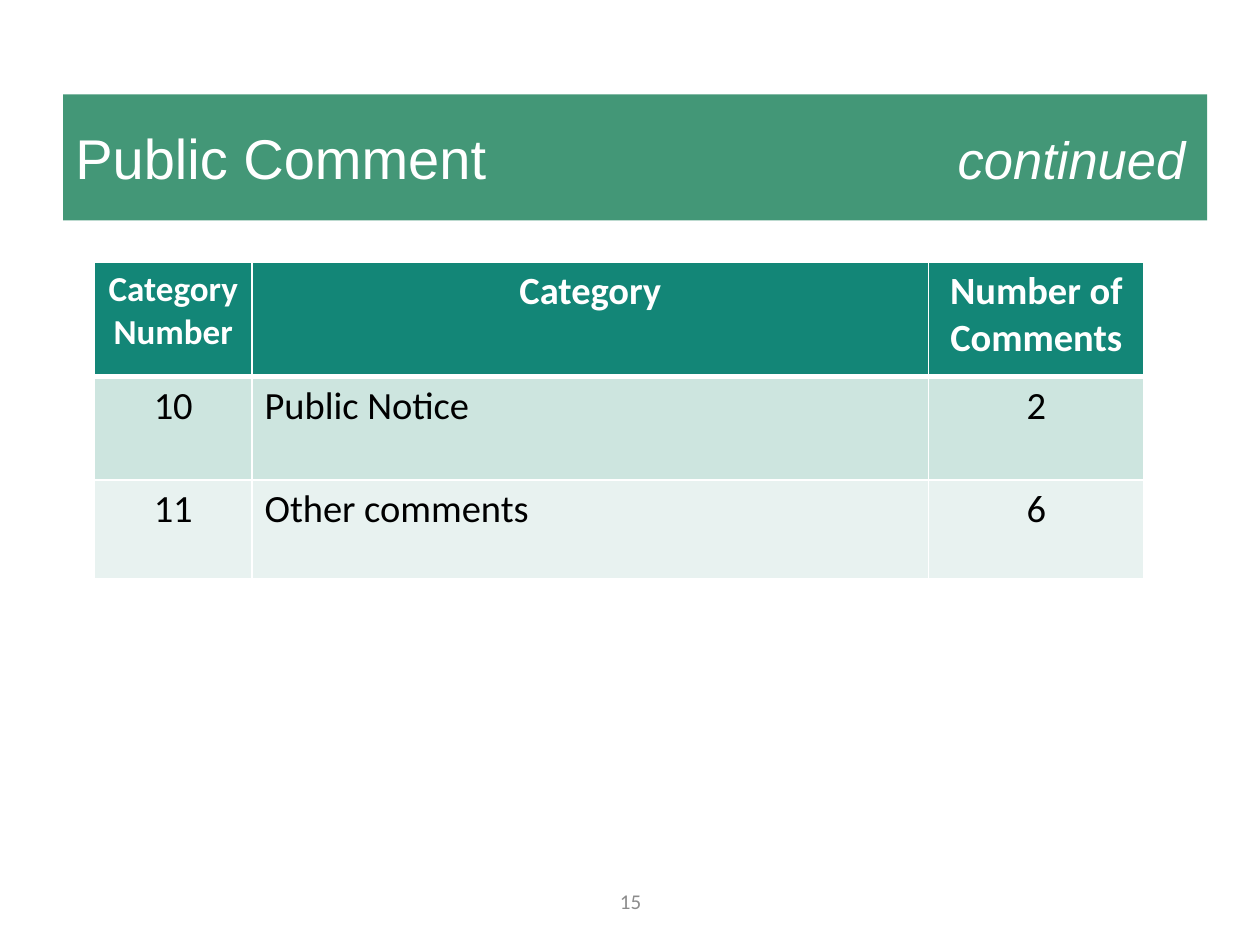
from lxml.etree import SubElement
from pptx import Presentation
from pptx.dml.color import RGBColor
from pptx.enum.shapes import MSO_SHAPE
from pptx.enum.text import MSO_ANCHOR, PP_ALIGN
from pptx.oxml.ns import qn
from pptx.util import Inches, Pt

TITLE, TITLE_NOTE = "Public Comment", "continued"
PAGE_NUMBER = "15"
HEADINGS = [("Category Number", 20), ("Category", 22), ("Number of Comments", 22)]
COMMENTS = [("10", "Public Notice", "2"), ("11", "Other comments", "6")]

COLUMN_WIDTHS = [1.25, 5.37, 1.71]
ROW_HEIGHTS = [0.91, 0.82, 0.78]
ROW_FILLS = ["138677", "CDE5DF", "E8F2F0"]
COLUMN_ALIGNS = [PP_ALIGN.CENTER, PP_ALIGN.LEFT, PP_ALIGN.CENTER]


def rgb(value):
    return RGBColor.from_string(value)


def fill(target, value):
    target.fill.solid()
    target.fill.fore_color.rgb = rgb(value)


def add_text(paragraph, text, size=22, font="Calibri", color="000000",
             bold=False, italic=False, align=PP_ALIGN.LEFT):
    paragraph.alignment = align
    run = paragraph.add_run()
    run.text = text
    run.font.size = Pt(size)
    run.font.name = font
    run.font.color.rgb = rgb(color)
    run.font.bold = bold
    run.font.italic = italic


def add_right_tab(paragraph, position):
    tabs = SubElement(paragraph._p.get_or_add_pPr(), qn("a:tabLst"))
    SubElement(tabs, qn("a:tab"), pos=str(Inches(position)), algn="r")


def set_borders(cell, **widths):
    """Draw white borders; call before filling, since lines precede the fill."""
    properties = cell._tc.get_or_add_tcPr()
    for side in "LRTB":
        line = SubElement(properties, qn(f"a:ln{side}"), w=str(Pt(widths.get(side, 1))))
        solid = SubElement(line, qn("a:solidFill"))
        SubElement(solid, qn("a:srgbClr"), val="FFFFFF")


def add_title(slide):
    banner = slide.shapes.add_shape(
        MSO_SHAPE.RECTANGLE, Inches(0.5), Inches(0.75), Inches(9.08), Inches(1))
    banner.shadow.inherit = False
    fill(banner, "439777")
    banner.line.fill.background()
    banner.text_frame.word_wrap = True
    banner.text_frame.vertical_anchor = MSO_ANCHOR.MIDDLE
    heading = banner.text_frame.paragraphs[0]
    add_text(heading, TITLE, size=32, font="Arial", color="FFFFFF")
    add_text(heading, "\t" + TITLE_NOTE, size=30, font="Arial", color="FFFFFF", italic=True)
    add_right_tab(heading, 8.81)


def add_comment_table(slide):
    table = slide.shapes.add_table(
        len(ROW_HEIGHTS), len(COLUMN_WIDTHS), Inches(0.75), Inches(2.08),
        Inches(sum(COLUMN_WIDTHS)), Inches(sum(ROW_HEIGHTS))).table
    for column, width in zip(table.columns, COLUMN_WIDTHS):
        column.width = Inches(width)
    for row, height in zip(table.rows, ROW_HEIGHTS):
        row.height = Inches(height)

    for r, row_fill in enumerate(ROW_FILLS):
        for c, align in enumerate(COLUMN_ALIGNS):
            cell = table.cell(r, c)
            set_borders(cell, T=3 if r == 1 else 1, B=3 if r == 0 else 1)
            fill(cell, row_fill)
            paragraph = cell.text_frame.paragraphs[0]
            if r == 0:
                heading, size = HEADINGS[c]
                add_text(paragraph, heading, size=size, color="FFFFFF", bold=True,
                         align=PP_ALIGN.CENTER)
            else:
                add_text(paragraph, COMMENTS[r - 1][c], align=align)


def add_page_number(slide):
    footer = slide.shapes.add_textbox(
        Inches(3.42), Inches(6.95), Inches(3.17), Inches(0.4)).text_frame
    footer.word_wrap = True
    footer.vertical_anchor = MSO_ANCHOR.MIDDLE
    add_text(footer.paragraphs[0], PAGE_NUMBER, size=12, color="8C8C8C",
             align=PP_ALIGN.CENTER)


def main():
    presentation = Presentation()
    presentation.slide_width = Inches(10)
    presentation.slide_height = Inches(7.5)
    slide = presentation.slides.add_slide(presentation.slide_layouts[6])
    add_page_number(slide)
    add_title(slide)
    add_comment_table(slide)
    presentation.save("out.pptx")


if __name__ == "__main__":
    main()
